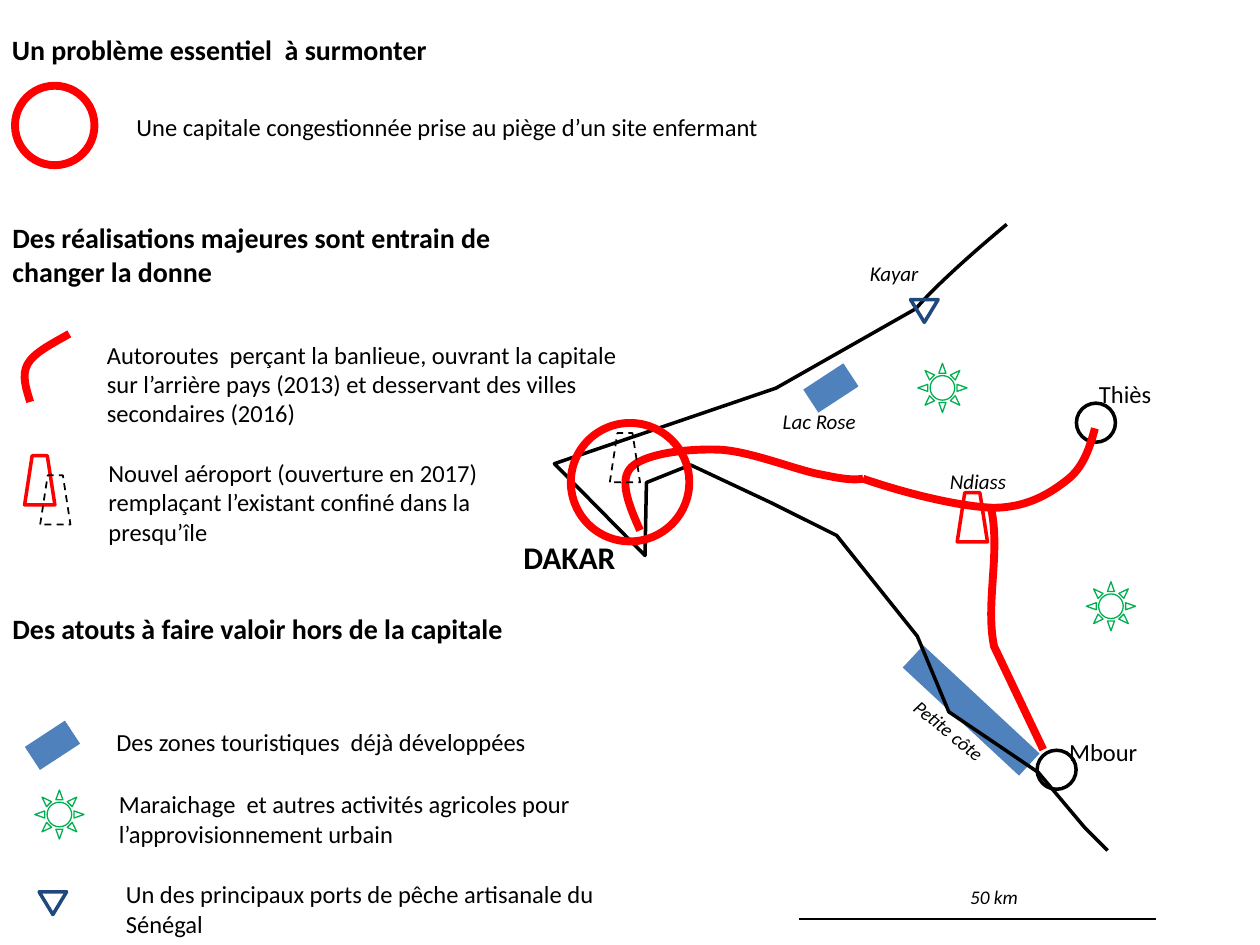
from pptx import Presentation
from pptx.dml.color import RGBColor
from pptx.enum.dml import MSO_LINE
from pptx.enum.shapes import MSO_CONNECTOR, MSO_SHAPE
from pptx.enum.text import MSO_ANCHOR, MSO_AUTO_SIZE, PP_ALIGN
from pptx.util import Pt
from lxml.etree import SubElement
from pptx.oxml.ns import qn

BLACK, RED, GREEN, BLUE, NAVY = "000000", "FF0000", "00B050", "4F81BD", "1F497D"

# Outlines in points: pairs are straight segments, six numbers a Bézier curve
COAST = [(632.9, 486), (619.9, 473), (593.3, 441.4), (542.2, 406.8),
         (524.2, 363.6), (478.1, 306), (440.6, 287.3), (394.6, 265.7),
         (369.4, 275.8), (368.6, 317.5), (316.8, 265), (443.5, 221.8),
         (523.4, 176.4), (538.6, 158.4, 575.3, 128.2, 575.3, 128.2)]
ROADS = [
    # Dakar to the junction
    [(365.8, 303.1), (359.3, 288.7, 353.5, 274.3, 360.7, 267.1),
     (368.6, 259.2, 392.4, 256.3, 411.1, 257),
     (429.1, 257.8, 456.5, 269.3, 470.2, 271.4),
     (483.8, 274.3, 488.9, 274.3, 493.2, 273.6)],
    # Junction to Thiès
    [(493.2, 273.6), (518.4, 282.2, 547.9, 289.4, 567.4, 290.2),
     (586.8, 290.2, 599.8, 282.2, 609.8, 274.3),
     (619.2, 267.1, 622.8, 255.6, 625.7, 244.8)],
    # Ndiass to Mbour
    [(566.6, 291.6), (571.7, 316.8, 563, 344.9, 568.1, 369.4), (596.2, 428.4)],
    # Legend
    [(17.3, 229.7), (15.1, 222.5, 12.2, 214.6, 15.8, 208.1),
     (19.4, 201.6, 29.5, 196.6, 39.6, 190.8)],
]

# Text, left, top, width, height, wrap
HEADINGS = [
    ("Des réalisations majeures sont entrain de changer la donne",
     0, 122.7, 331.9, 46, True),
    ("Des atouts à faire valoir hors de la capitale", 0, 346, 298, 26.6, False),
]
LEGEND = [
    ("Une capitale congestionnée prise au piège d’un site enfermant",
     70.9, 60.5, 373.7, 24.5, False),
    ("Autoroutes  perçant la banlieue, ouvrant la capitale sur l’arrière pays "
     "(2013) et desservant des villes secondaires (2016)",
     54, 190.5, 306, 58.3, True),
    ("Nouvel aéroport (ouverture en 2017) remplaçant l’existant confiné dans "
     "la presqu’île", 54.9, 258.1, 232.6, 58.3, True),
    ("Des zones touristiques  déjà développées", 59.4, 411.8, 251.3, 24.5, False),
    ("Maraichage  et autres activités agricoles pour l’approvisionnement urbain",
     60.8, 447.4, 289.4, 41, True),
    ("Un des principaux ports de pêche artisanale du Sénégal",
     64.8, 499, 289.4, 41, True),
]
TOWNS = [("Thiès", 620.9, 213.1, 44.6, 24.5, False),
         ("Mbour", 603.8, 417.6, 54, 24.5, False)]
PLACES = [("Ndiass", 535.7, 264.2, 46.8, 21.6, False),
          ("Lac Rose", 440.2, 230, 56.9, 21.6, False),
          ("Kayar", 490, 145.4, 42.5, 21.6, False)]


def rgb(color):
    return RGBColor.from_string(color)


def set_line(sp, color, width, dash=None):
    sp.line.color.rgb = rgb(color)
    sp.line.width = Pt(width)
    if dash:
        sp.line.dash_style = dash


def format_text(sp, text, size, wrap=False, bold=False, italic=False):
    tf = sp.text_frame
    tf.text = text
    tf.word_wrap = wrap
    tf.auto_size = MSO_AUTO_SIZE.SHAPE_TO_FIT_TEXT
    tf.vertical_anchor = MSO_ANCHOR.TOP
    p = tf.paragraphs[0]
    p.alignment = PP_ALIGN.LEFT
    p.font.name = "Calibri"
    p.font.size = Pt(size)
    p.font.bold, p.font.italic = bold, italic
    p.font.color.rgb = rgb(BLACK)


def add_title(s, text, x, y, w, h):
    sp = s.shapes.title
    sp.left, sp.top, sp.width, sp.height = Pt(x), Pt(y), Pt(w), Pt(h)
    format_text(sp, text, 16, bold=True)


def add_text(s, text, x, y, w, h, wrap, size, rotation=0, **style):
    sp = s.shapes.add_textbox(Pt(x), Pt(y), Pt(w), Pt(h))
    sp.rotation = rotation
    format_text(sp, text, size, wrap, **style)


def add_symbol(s, kind, x, y, w, h, color, width=None, rotation=0, dash=None):
    """Filled without a line width, outlined with one."""
    sp = s.shapes.add_shape(kind, Pt(x), Pt(y), Pt(w), Pt(h))
    sp.shadow.inherit = False
    sp.rotation = rotation
    if width:
        sp.fill.background()
        set_line(sp, color, width, dash)
    else:
        sp.fill.solid()
        sp.fill.fore_color.rgb = rgb(color)
        sp.line.fill.background()


def bend(sp, outline):
    """Turn the straight segments of curved steps into Bézier curves."""
    segments = list(sp._element.iter(qn("a:lnTo")))
    for segment, step in zip(segments, outline[1:]):
        if len(step) == 6:
            segment.tag = qn("a:cubicBezTo")
            segment.clear()
            for x, y in zip(step[::2], step[1::2]):
                SubElement(segment, qn("a:pt"), x=str(Pt(x) - sp.left),
                           y=str(Pt(y) - sp.top))


def add_outline(s, outline, color, width):
    points = [(Pt(step[-2]), Pt(step[-1])) for step in outline]
    builder = s.shapes.build_freeform(*points[0])
    builder.add_line_segments(points[1:], close=False)
    sp = builder.convert_to_shape()
    bend(sp, outline)
    sp.shadow.inherit = False
    sp.fill.background()
    set_line(sp, color, width)


def add_scale_bar(s, x1, x2, y):
    sp = s.shapes.add_connector(MSO_CONNECTOR.STRAIGHT, Pt(x1), Pt(y), Pt(x2), Pt(y))
    set_line(sp, BLACK, 0.75)
    SubElement(sp._element.spPr, qn("a:effectLst"))


def main():
    prs = Presentation()
    prs.slide_width, prs.slide_height = Pt(720), Pt(540)
    s = prs.slides.add_slide(prs.slide_layouts[5])
    add_title(s, "Un problème essentiel  à surmonter", -0.4, 15.1, 254.9, 26.6)

    # Tourist areas, then the coast over them
    add_symbol(s, MSO_SHAPE.RECTANGLE, 509.6, 397.4, 90.7, 17.3, BLUE, rotation=42.9)
    for x, y in ((461.1, 213.8), (16.3, 418)):
        add_symbol(s, MSO_SHAPE.RECTANGLE, x, y, 27.4, 15.8, BLUE, rotation=326.8)
    add_outline(s, COAST, BLACK, 2)

    # Towns, farming, new airport and fishing ports
    for x, y in ((615.1, 230.4), (592.6, 428.7)):
        add_symbol(s, MSO_SHAPE.OVAL, x, y, 22.3, 22.3, BLACK, 2)
    for x, y in ((524.5, 207.6), (620.8, 332.4), (19.9, 451.4)):
        add_symbol(s, MSO_SHAPE.SUN, x, y, 28.1, 28.1, GREEN, 0.75)
    for x, y in ((547, 281.5), (14.1, 260.4)):
        add_symbol(s, MSO_SHAPE.TRAPEZOID, x, y, 17.3, 28.1, RED, 2)
    for x, y in ((520.3, 171.2), (22.3, 509.6)):
        add_symbol(s, MSO_SHAPE.ISOSCELES_TRIANGLE, x, y, 15.8, 13, NAVY, 2, 180)

    # Motorways, congested capital and existing airport
    for road in ROADS:
        add_outline(s, road, RED, 4.5)
    for x, y, d in ((326.2, 241.7, 67.7), (8.6, 49, 45.4)):
        add_symbol(s, MSO_SHAPE.OVAL, x, y, d, d, RED, 4.5)
    for x, y in ((348.5, 247.5), (23, 271.6)):
        add_symbol(s, MSO_SHAPE.TRAPEZOID, x, y, 17.3, 28.1, BLACK, 1,
                   dash=MSO_LINE.DASH)

    # Legend texts and map labels
    for heading in HEADINGS:
        add_text(s, *heading, size=16, bold=True)
    for label in LEGEND + TOWNS:
        add_text(s, *label, size=14)
    for place in PLACES:
        add_text(s, *place, size=12, italic=True)
    add_text(s, "DAKAR", 292, 303.8, 67.7, 28.8, False, 18, bold=True)
    add_text(s, "Petite côte", 511.2, 407.5, 62.6, 20.9, False, 11, 39.2, italic=True)

    # Scale
    add_scale_bar(s, 456.5, 660.7, 525.2)
    add_text(s, "50 km", 547.2, 502.3, 42.5, 20.9, False, 11, italic=True)

    prs.save("out.pptx")


if __name__ == "__main__":
    main()
